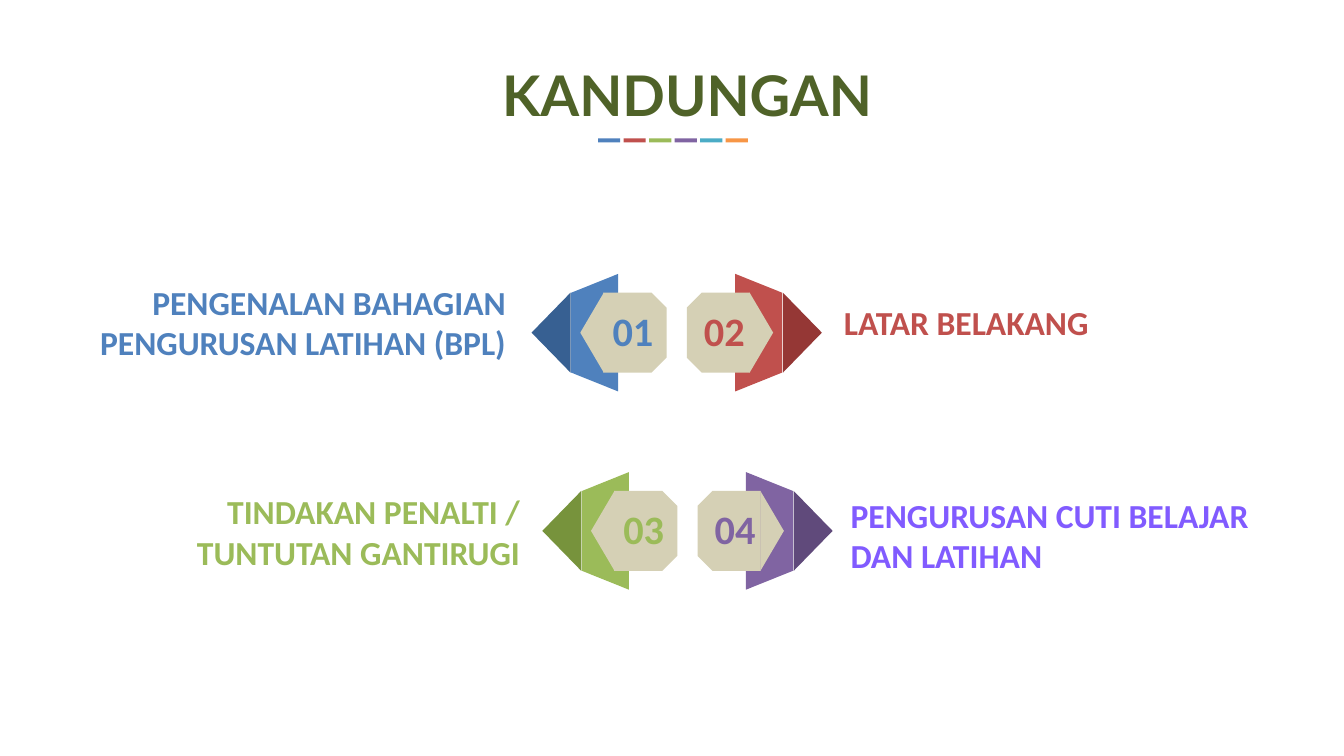
import pptx
import pptx.dml.color
import pptx.enum.shapes
import pptx.enum.text
import pptx.util

Inches = pptx.util.Inches
RGBColor = pptx.dml.color.RGBColor
Shape = pptx.enum.shapes.MSO_SHAPE
Align = pptx.enum.text.PP_ALIGN

BLUE, DARK_BLUE = RGBColor(0x4F, 0x81, 0xBD), RGBColor(0x37, 0x60, 0x92)
RED, DARK_RED = RGBColor(0xC0, 0x50, 0x4D), RGBColor(0x95, 0x37, 0x35)
GREEN, DARK_GREEN = RGBColor(0x9B, 0xBB, 0x59), RGBColor(0x77, 0x93, 0x3C)
PURPLE, DARK_PURPLE = RGBColor(0x80, 0x64, 0xA2), RGBColor(0x60, 0x4A, 0x7B)
VIOLET = RGBColor(0x81, 0x5B, 0xFF)
TEAL = RGBColor(0x4B, 0xAC, 0xC6)
ORANGE = RGBColor(0xF7, 0x96, 0x46)
OLIVE = RGBColor(0x4F, 0x62, 0x28)
BEIGE = RGBColor(0xD5, 0xD0, 0xB5)

LEFT, RIGHT = -1, 1

# number, side, row axis, row middle, colour, dark colour, text colour, label, label box
TOPICS = [
    ("01", LEFT, 10.07, 4.95, BLUE, DARK_BLUE, BLUE,
     "PENGENALAN BAHAGIAN PENGURUSAN LATIHAN (BPL)", (0.9, 4.14, 6.73, 1.31)),
    ("02", RIGHT, 10.07, 4.95, RED, DARK_RED, RED,
     "LATAR BELAKANG", (12.46, 4.44, 5.87, 0.71)),
    ("03", LEFT, 10.23, 7.9, GREEN, DARK_GREEN, GREEN,
     "TINDAKAN PENALTI / TUNTUTAN GANTIRUGI", (1.73, 7.26, 6.11, 1.31)),
    ("04", RIGHT, 10.23, 7.9, PURPLE, DARK_PURPLE, VIOLET,
     "PENGURUSAN CUTI BELAJAR DAN LATIHAN", (12.56, 7.31, 6.49, 1.31)),
]


class ContentsSlide:
    """Holds the slide and the shared text style."""

    font = "Calibri"
    title_font = "Lato"

    def __init__(self, presentation):
        self.slide = presentation.slides.add_slide(presentation.slide_layouts[5])

    def style_text(self, shape, text, size, color, align, font, wrap=True):
        frame = shape.text_frame
        frame.text = text
        frame.word_wrap = wrap
        frame.auto_size = pptx.enum.text.MSO_AUTO_SIZE.SHAPE_TO_FIT_TEXT
        frame.vertical_anchor = pptx.enum.text.MSO_ANCHOR.TOP
        paragraph = frame.paragraphs[0]
        paragraph.alignment = align
        paragraph.font.name = font
        paragraph.font.size = pptx.util.Pt(size)
        paragraph.font.bold = True
        paragraph.font.color.rgb = color

    def title(self, text, left, top, width, height):
        shape = self.slide.shapes.title
        shape.left, shape.top = Inches(left), Inches(top)
        shape.width, shape.height = Inches(width), Inches(height)
        self.style_text(shape, text, 60, OLIVE, Align.CENTER, self.title_font)

    def text(self, text, box, size, color, align, wrap=True):
        shape = self.slide.shapes.add_textbox(*map(Inches, box))
        self.style_text(shape, text, size, color, align, self.font, wrap)

    def solid(self, kind, center_x, center_y, width, height, color,
              rotation=0, adjustments=()):
        shape = self.slide.shapes.add_shape(
            kind, Inches(center_x - width / 2), Inches(center_y - height / 2),
            Inches(width), Inches(height))
        shape.rotation = rotation
        for index, value in enumerate(adjustments):
            shape.adjustments[index] = value
        shape.shadow.inherit = False
        shape.fill.solid()
        shape.fill.fore_color.rgb = color
        shape.line.fill.background()

    def badge(self, number, side, axis, middle, color, dark):
        """Draw an arrow badge pointing away from the row axis."""
        outward, inward = (270, 90) if side == LEFT else (90, 270)
        parts = [
            (Shape.TRAPEZOID, 1.22, 1.75, 0.7, color, outward, [0.402]),
            (Shape.ISOSCELES_TRIANGLE, 1.87, 1.19, 0.58, dark, outward, []),
            (Shape.SNIP_2_SAME_RECTANGLE, 0.62, 1.19, 0.94, BEIGE, inward, [0.238, 0]),
            (Shape.ISOSCELES_TRIANGLE, 1.26, 1.19, 0.35, BEIGE, outward, []),
        ]
        for kind, offset, width, height, fill, rotation, adjustments in parts:
            self.solid(kind, axis + side * offset, middle, width, height,
                       fill, rotation, adjustments)
        number_box = (axis + 0.03 + side * 0.68 - 0.41, middle - 0.45, 0.82, 0.83)
        self.text(number, number_box, 43.2, color, Align.CENTER, wrap=False)

    def color_bars(self, colors, left, top, width, height, step):
        for index, color in enumerate(colors):
            self.solid(Shape.RECTANGLE, left + index * step + width / 2,
                       top + height / 2, width, height, color)


def main():
    presentation = pptx.Presentation()
    presentation.slide_width = Inches(20)
    presentation.slide_height = Inches(11.25)

    contents = ContentsSlide(presentation)
    contents.title("KANDUNGAN", 1.2, 0.85, 18.05, 1.11)
    contents.color_bars([BLUE, RED, GREEN, PURPLE, TEAL, ORANGE],
                        8.9, 2.06, 0.33, 0.06, step=0.38)
    for number, side, axis, middle, color, dark, text_color, label, box in TOPICS:
        contents.badge(number, side, axis, middle, color, dark)
        align = Align.RIGHT if side == LEFT else Align.LEFT
        contents.text(label, box, 36, text_color, align)

    presentation.save("out.pptx")


if __name__ == "__main__":
    main()
